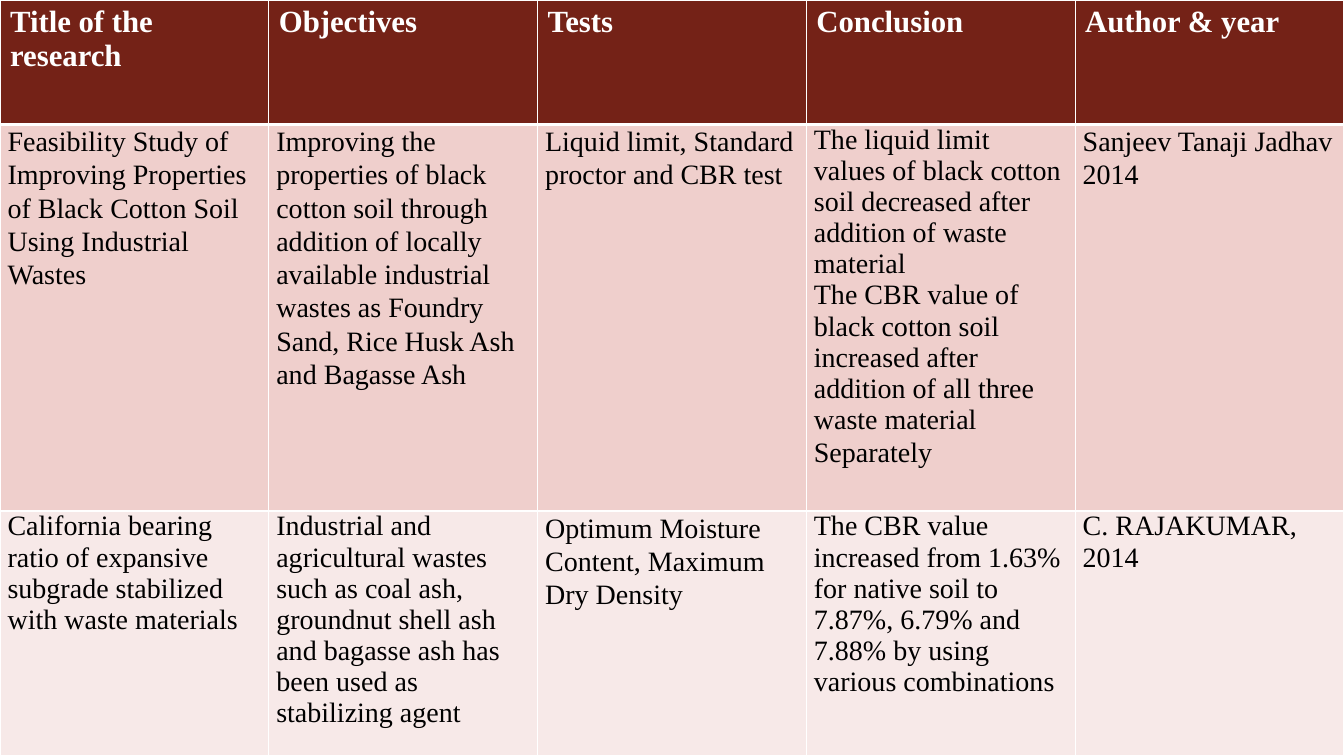
"""Build a literature review slide filled by one table of soil studies."""
from dataclasses import dataclass

from lxml.etree import SubElement
from pptx import Presentation
from pptx.dml.color import RGBColor
from pptx.oxml.ns import qn
from pptx.table import _Cell
from pptx.util import Pt

FONT = "Times New Roman"
WHITE = RGBColor(0xFF, 0xFF, 0xFF)
BLACK = RGBColor(0x00, 0x00, 0x00)
MAROON = RGBColor(0x74, 0x22, 0x17)
ROSE = RGBColor(0xEF, 0xCF, 0xCC)
BLUSH = RGBColor(0xF7, 0xE9, 0xE8)

PAGE_WIDTH, PAGE_HEIGHT = Pt(960), Pt(540)
LOOSE = 1.07
THIN, THICK = Pt(1), Pt(3)


@dataclass(frozen=True)
class Line:
    text: str
    spacing: float = 1.0


@dataclass(frozen=True)
class RowStyle:
    height: Pt
    fill: RGBColor
    color: RGBColor
    size: Pt
    bold: bool
    side_margin: Pt
    end_margin: Pt
    top_border: Pt
    bottom_border: Pt


@dataclass(frozen=True)
class Row:
    style: RowStyle
    cells: list[list[Line]]


HEADER = RowStyle(Pt(89), MAROON, WHITE, Pt(22), True, Pt(7.2), Pt(3.6), THIN, THICK)
FIRST_STUDY = RowStyle(Pt(276), ROSE, BLACK, Pt(20), False, Pt(5.4), Pt(0), THICK, THIN)
SECOND_STUDY = RowStyle(Pt(175), BLUSH, BLACK, Pt(20), False, Pt(5.4), Pt(0), THIN, THIN)

ROWS = [
    Row(HEADER, [
        [Line("Title of the research")],
        [Line("Objectives")],
        [Line("Tests")],
        [Line("Conclusion")],
        [Line("Author & year")],
    ]),
    Row(FIRST_STUDY, [
        [Line("Feasibility Study of Improving Properties of Black Cotton Soil "
              "Using Industrial Wastes", LOOSE)],
        [Line("Improving the properties of black cotton soil through addition of "
              "locally available industrial wastes as Foundry Sand, Rice Husk Ash "
              "and Bagasse Ash", LOOSE)],
        [Line("Liquid limit, Standard proctor and CBR test", LOOSE)],
        [Line("The liquid limit values of black cotton soil decreased after "
              "addition of waste material"),
         Line("The CBR value of black cotton soil increased after addition of "
              "all three waste material"),
         Line("Separately", LOOSE)],
        [Line("Sanjeev Tanaji Jadhav", LOOSE), Line("2014", LOOSE)],
    ]),
    Row(SECOND_STUDY, [
        [Line("California bearing ratio of expansive subgrade stabilized with "
              "waste materials")],
        [Line("Industrial and agricultural wastes such as coal ash, groundnut "
              "shell ash and bagasse ash has been used as stabilizing agent")],
        [Line("Optimum Moisture Content, Maximum Dry Density", LOOSE)],
        [Line("The CBR value increased from 1.63% for native soil to 7.87%, 6.79% "
              "and 7.88% by using various combinations")],
        [Line("C. RAJAKUMAR,"), Line("2014")],
    ]),
]


def set_borders(cell: _Cell, top: Pt, bottom: Pt) -> None:
    """Draw white borders, placed ahead of the cell fill as the schema asks."""
    properties = cell._tc.get_or_add_tcPr()
    widths = {"a:lnL": THIN, "a:lnR": THIN, "a:lnT": top, "a:lnB": bottom}
    for position, (tag, width) in enumerate(widths.items()):
        border = SubElement(properties, qn(tag), w=str(int(width)))
        fill = SubElement(border, qn("a:solidFill"))
        SubElement(fill, qn("a:srgbClr"), val=str(WHITE))
        properties.insert(position, border)


def fill_cell(cell: _Cell, lines: list[Line], style: RowStyle) -> None:
    """Write the lines into a cell and format it by its row style."""
    cell.margin_left = cell.margin_right = style.side_margin
    cell.margin_top = cell.margin_bottom = style.end_margin
    cell.fill.solid()
    cell.fill.fore_color.rgb = style.fill
    set_borders(cell, style.top_border, style.bottom_border)
    cell.text_frame.text = "\n".join(line.text for line in lines)
    for para, line in zip(cell.text_frame.paragraphs, lines):
        para.line_spacing = line.spacing
        para.font.name = FONT
        para.font.size = style.size
        para.font.bold = style.bold
        para.font.color.rgb = style.color


def main() -> None:
    """Create the deck with its table and save it."""
    deck = Presentation()
    deck.slide_width, deck.slide_height = PAGE_WIDTH, PAGE_HEIGHT
    page = deck.slides.add_slide(deck.slide_layouts[6])
    table = page.shapes.add_table(
        len(ROWS), len(ROWS[0].cells), Pt(0), Pt(0), PAGE_WIDTH, PAGE_HEIGHT
    ).table
    for row_index, row in enumerate(ROWS):
        table.rows[row_index].height = row.style.height
        for column_index, lines in enumerate(row.cells):
            fill_cell(table.cell(row_index, column_index), lines, row.style)
    deck.save("out.pptx")


if __name__ == "__main__":
    main()
